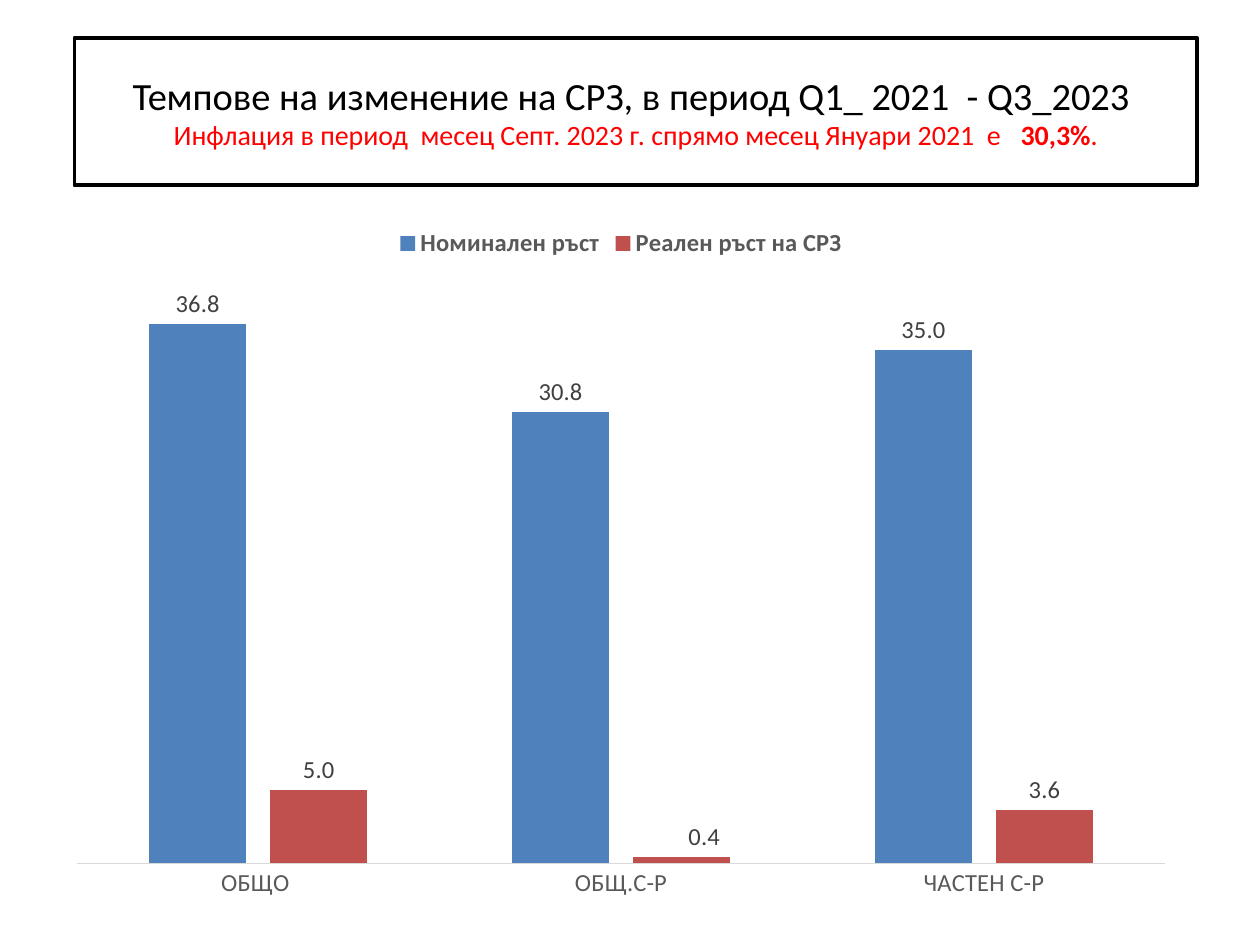
from lxml import etree
from pptx import Presentation
from pptx.chart.data import CategoryChartData
from pptx.dml.color import RGBColor
from pptx.enum import chart as ch, text
from pptx.oxml import ns
from pptx.util import Inches, Pt

COLORS = {"black": "000000", "white": "FFFFFF", "inflation": "FF0000",
          "nominal": "4F81BD", "real": "C0504D", "axis_text": "595959",
          "label_text": "404040", "axis_line": "D9D9D9"}


def set_font(font, size, color, bold=False):
    font.name = "Calibri"
    font.size = Pt(size)
    font.bold = bold
    font.color.rgb = RGBColor.from_string(COLORS[color])


def set_layout(parent, position, **values):
    """Give a chart part a manual layout, in fractions of the chart."""
    for old in parent.findall(ns.qn("c:layout")):
        parent.remove(old)
    layout = etree.Element(ns.qn("c:layout"))
    manual = etree.SubElement(layout, ns.qn("c:manualLayout"))
    for tag, value in values.items():
        etree.SubElement(manual, ns.qn(f"c:{tag}")).set("val", str(value))
    parent.insert(position, layout)


prs = Presentation()
prs.slide_width, prs.slide_height = Inches(10), Inches(7.5)
slide = prs.slides.add_slide(prs.slide_layouts[5])

# Framed title
title = slide.shapes.title
title.left, title.top = Inches(0.59), Inches(0.3)
title.width, title.height = Inches(8.91), Inches(1.17)
title.fill.solid()
title.fill.fore_color.rgb = RGBColor.from_string(COLORS["white"])
title.line.color.rgb = RGBColor.from_string(COLORS["black"])
title.line.width = Pt(2)
frame = title.text_frame
frame.word_wrap = True
frame.auto_size = text.MSO_AUTO_SIZE.NONE
frame.vertical_anchor = text.MSO_ANCHOR.MIDDLE
heading = frame.paragraphs[0]
heading.alignment = text.PP_ALIGN.CENTER

period = heading.add_run()
period.text = "Темпове на изменение на СРЗ, в период Q1_ 2021  - Q3_2023 "
set_font(period.font, 22, "black")
heading.add_line_break()
for wording, bold in [
    ("Инфлация в период  месец Септ. 2023 г. спрямо месец Януари 2021  е   ", False),
    ("30,3%", True),
    (".", False),
]:
    inflation = heading.add_run()
    inflation.text = wording
    set_font(inflation.font, 16, "inflation", bold)

# Growth chart
growth = CategoryChartData(number_format="0.0")
growth.categories = ["ОБЩО ", "ОБЩ.С-Р", "ЧАСТЕН С-Р"]
growth.add_series("Номинален ръст", [36.8, 30.8, 35])
growth.add_series("Реален ръст на СРЗ", [5, 0.4, 3.6])
chart = slide.shapes.add_chart(
    ch.XL_CHART_TYPE.COLUMN_CLUSTERED,
    Inches(0.43), Inches(1.7), Inches(9), Inches(5.54), growth).chart
set_font(chart.font, 10, "black")
chart.has_title = False
chart.has_legend = True
chart.legend.position = ch.XL_LEGEND_POSITION.TOP
chart.legend.include_in_layout = False
set_font(chart.legend.font, 14, "axis_text", True)

sectors = chart.category_axis
sectors.major_tick_mark = ch.XL_TICK_MARK.NONE
sectors.format.line.color.rgb = RGBColor.from_string(COLORS["axis_line"])
sectors.format.line.width = Pt(0.75)
set_font(sectors.tick_labels.font, 14, "axis_text")

percent = chart.value_axis
percent.minimum_scale, percent.maximum_scale = 0, 40
percent.has_major_gridlines = False
percent.tick_labels.number_format = "0.0"
percent.tick_labels.number_format_is_linked = False
percent.visible = False

plot = chart.plots[0]
plot.gap_width, plot.overlap = 150, -25
plot.vary_by_categories = False
for series, color in zip(plot.series, ["nominal", "real"]):
    series.format.fill.solid()
    series.format.fill.fore_color.rgb = RGBColor.from_string(COLORS[color])
    series.invert_if_negative = False
    labels = series.data_labels
    labels.show_value = True
    labels.number_format = "0.0"
    labels.number_format_is_linked = False
    labels.position = ch.XL_LABEL_POSITION.OUTSIDE_END
    set_font(labels.font, 14, "label_text")

# The label of the smallest column stands a little to the right
public_real = plot.series[1].points[1].data_label
public_real.position = ch.XL_LABEL_POSITION.OUTSIDE_END
set_font(public_real.font, 14, "label_text")
label_xml = plot.series[1].data_labels._element.find(ns.qn("c:dLbl"))
set_layout(label_xml, 1, x=0.02, y=0)

plot_area = chart._chartSpace.find(".//" + ns.qn("c:plotArea"))
set_layout(plot_area, 0, layoutTarget="inner", xMode="edge", yMode="edge",
           x=0.02, y=0.09, w=0.96, h=0.84)

prs.save("out.pptx")
